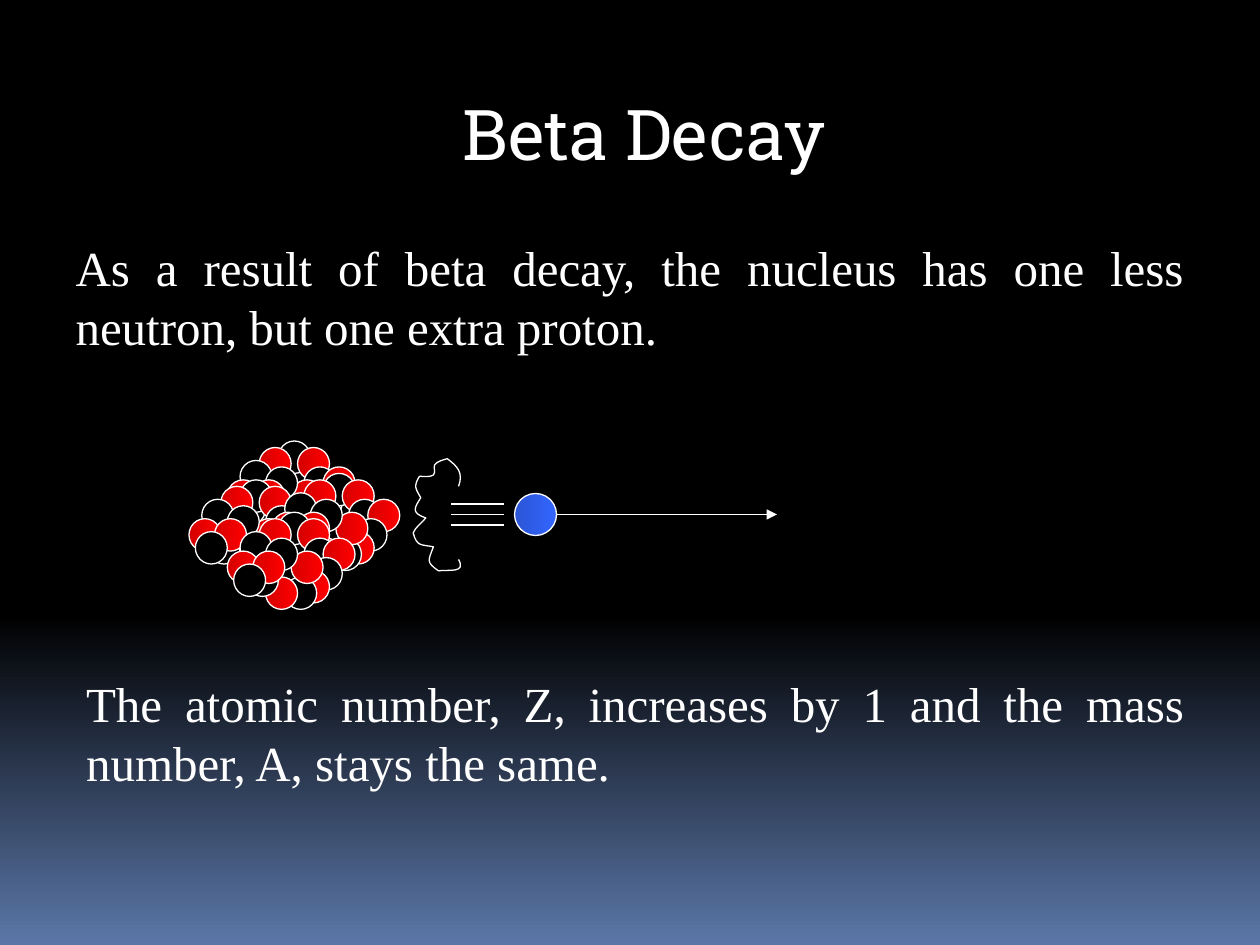
"""Build the Beta Decay slide: a nucleus emitting an electron, with its explanation."""

from dataclasses import dataclass
from typing import Any

import lxml.etree
import pptx
import pptx.dml.color
import pptx.enum.shapes
import pptx.enum.text
import pptx.oxml.ns
import pptx.util

COLORS = {
    "black": "000000",
    "white": "FFFFFF",
    "sky": "5B77A8",
    "dark red": "D50000",
    "red": "FF0000",
    "dark blue": "2B55D5",
    "blue": "3366FF",
}
PROTON = ("dark red", "red")
NEUTRON = ("black",)
ELECTRON = ("dark blue", "blue")


@dataclass(frozen=True)
class Box:
    left: float
    top: float
    width: float
    height: float

    def lengths(self) -> tuple[pptx.util.Length, ...]:
        return tuple(map(pptx.util.Pt, (self.left, self.top, self.width, self.height)))


@dataclass(frozen=True)
class Nucleon:
    column: int
    row: int
    fill: tuple[str, ...]


@dataclass(frozen=True)
class Cluster:
    column: int
    row: int
    missing: int | None = None


@dataclass(frozen=True)
class Line:
    start: float
    end: float
    height: float
    arrow: bool = False


GRID_LEFT, GRID_TOP, COLUMN_STEP, ROW_STEP = 108, 252, 3.65, 3.7
NUCLEON_WIDTH, NUCLEON_HEIGHT = 18.25, 18.5
NUCLEONS = [
    Nucleon(0, 0, NEUTRON), Nucleon(3, 1, PROTON), Nucleon(4, 4, NEUTRON),
    Nucleon(-3, 1, PROTON), Nucleon(-2, 7, NEUTRON), Nucleon(-4, 5, PROTON),
    Nucleon(-6, 3, NEUTRON), Nucleon(7, 4, PROTON), Nucleon(5, 7, NEUTRON),
    Nucleon(3, 9, PROTON), Nucleon(1, 10, NEUTRON), Nucleon(-2, 10, PROTON),
    Nucleon(-5, 8, NEUTRON), Nucleon(-8, 6, PROTON), Nucleon(2, 6, PROTON),
    Nucleon(-2, 4, NEUTRON), Nucleon(-4, 6, PROTON), Nucleon(-7, 8, NEUTRON),
]
CLUSTERS = [Cluster(14, 0, missing=11), Cluster(8, 6), Cluster(21, 5), Cluster(14, 11)]
LINES = [Line(318, 444, 294, arrow=True)] + [Line(258, 288, 294 + gap) for gap in (-6, 6, 0)]
BURST = [
    (3.64, 3.86), (3.68, 3.75), (3.63, 3.7), (3.55, 3.64), (3.52, 3.65), (3.47, 3.66),
    (3.45, 3.69), (3.44, 3.71), (3.46, 3.75), (3.44, 3.77), (3.41, 3.79), (3.36, 3.78),
    (3.33, 3.78), (3.28, 3.86), (3.3, 3.88), (3.34, 3.95), (3.29, 4.03), (3.26, 4.07),
    (3.38, 4.11), (3.34, 4.16), (3.3, 4.18), (3.28, 4.23), (3.31, 4.34), (3.34, 4.32),
    (3.44, 4.34), (3.4, 4.45), (3.38, 4.46), (3.48, 4.53), (3.57, 4.52), (3.7, 4.55),
    (3.64, 4.44),
]


def rgb(name: str) -> pptx.dml.color.RGBColor:
    return pptx.dml.color.RGBColor.from_string(COLORS[name])


def add_tag(parent: Any, tag: str, **attributes: str) -> Any:
    return lxml.etree.SubElement(parent, pptx.oxml.ns.qn(tag), attributes)


def set_gradient(fill: Any, names: tuple[str, ...], angle: float, start: float = 0) -> None:
    fill.gradient()
    fill.gradient_angle = angle
    for stop, name, position in zip(fill.gradient_stops, names, (start, 1)):
        stop.color.rgb = rgb(name)
        stop.position = position


def set_outline(shape: Any) -> None:
    shape.line.color.rgb = rgb("white")
    shape.line.width = pptx.util.Pt(0.75)


def add_ball(group: Any, box: Box, names: tuple[str, ...]) -> None:
    ball = group.shapes.add_shape(pptx.enum.shapes.MSO_SHAPE.OVAL, *box.lengths())
    ball.shadow.inherit = False
    if len(names) > 1:
        set_gradient(ball.fill, names, 0)
    else:
        ball.fill.solid()
        ball.fill.fore_color.rgb = rgb(names[0])
    set_outline(ball)


def add_cluster(group: Any, cluster: Cluster) -> None:
    for index, nucleon in enumerate(NUCLEONS):
        if index != cluster.missing:
            left = GRID_LEFT + (cluster.column + nucleon.column) * COLUMN_STEP
            top = GRID_TOP + (cluster.row + nucleon.row) * ROW_STEP
            add_ball(group, Box(left, top, NUCLEON_WIDTH, NUCLEON_HEIGHT), nucleon.fill)


def add_line(group: Any, line: Line) -> None:
    points = map(pptx.util.Pt, (line.start, line.height, line.end, line.height))
    connector = group.shapes.add_connector(
        pptx.enum.shapes.MSO_CONNECTOR.STRAIGHT, *points
    )
    set_outline(connector)
    if line.arrow:
        add_tag(connector.line._get_or_add_ln(), "a:tailEnd", type="triangle")
    add_tag(connector._element.spPr, "a:effectLst")


def add_burst(group: Any) -> None:
    points = [(pptx.util.Pt(x * 72), pptx.util.Pt(y * 72)) for x, y in BURST]
    builder = group.shapes.build_freeform(*points[0])
    builder.add_line_segments(points[1:], close=False)
    burst = builder.convert_to_shape()
    segments = burst._element.xpath(".//a:lnTo")
    for first in range(0, len(segments), 3):
        curve = add_tag(segments[first].getparent(), "a:cubicBezTo")
        for segment in segments[first:first + 3]:
            curve.append(segment[0])
            segment.getparent().remove(segment)
    burst.shadow.inherit = False
    burst.fill.background()
    set_outline(burst)


def set_text(shape: Any, text: str, box: Box, font: str, size: float, alignment: Any) -> None:
    shape.left, shape.top, shape.width, shape.height = box.lengths()
    text_frame = shape.text_frame
    text_frame.text = text
    text_frame.auto_size = pptx.enum.text.MSO_AUTO_SIZE.SHAPE_TO_FIT_TEXT
    paragraph = text_frame.paragraphs[0]
    paragraph.alignment = alignment
    paragraph.space_before = pptx.util.Pt(0)
    properties = paragraph._p.get_or_add_pPr()
    properties.set("marL", "0")
    properties.set("indent", "0")
    add_tag(properties, "a:buNone")
    run = paragraph.runs[0]
    run.font.name = font
    run.font.size = pptx.util.Pt(size)
    run.font.color.rgb = rgb("white")


def main() -> None:
    presentation = pptx.Presentation()
    presentation.slide_width = pptx.util.Pt(720)
    presentation.slide_height = pptx.util.Pt(540)
    slide = presentation.slides.add_slide(presentation.slide_layouts.get_by_name("Two Content"))
    set_gradient(slide.background.fill, ("black", "sky"), 270, start=0.65)

    title, result, numbers = slide.placeholders
    align = pptx.enum.text.PP_ALIGN
    set_text(title, "Beta Decay", Box(250.5, 48, 235, 55.5), "Roboto Slab", 40, align.CENTER)
    title.text_frame.word_wrap = False
    set_text(result, "As a result of beta decay, the nucleus has one less neutron, "
             "but one extra proton.", Box(36, 132, 648, 74),
             "Times New Roman", 28, align.JUSTIFY)
    set_text(numbers, "The atomic number, Z, increases by 1 and the mass number, A, "
             "stays the same.", Box(42, 381.5, 642, 74),
             "Times New Roman", 28, align.JUSTIFY)

    nucleus = slide.shapes.add_group_shape()
    for cluster in CLUSTERS:
        add_cluster(nucleus, cluster)

    emission = slide.shapes.add_group_shape()
    add_ball(emission, Box(294, 282, 24, 24), ELECTRON)
    for line in LINES:
        add_line(emission, line)
    add_burst(emission)

    presentation.save("out.pptx")


if __name__ == "__main__":
    main()
